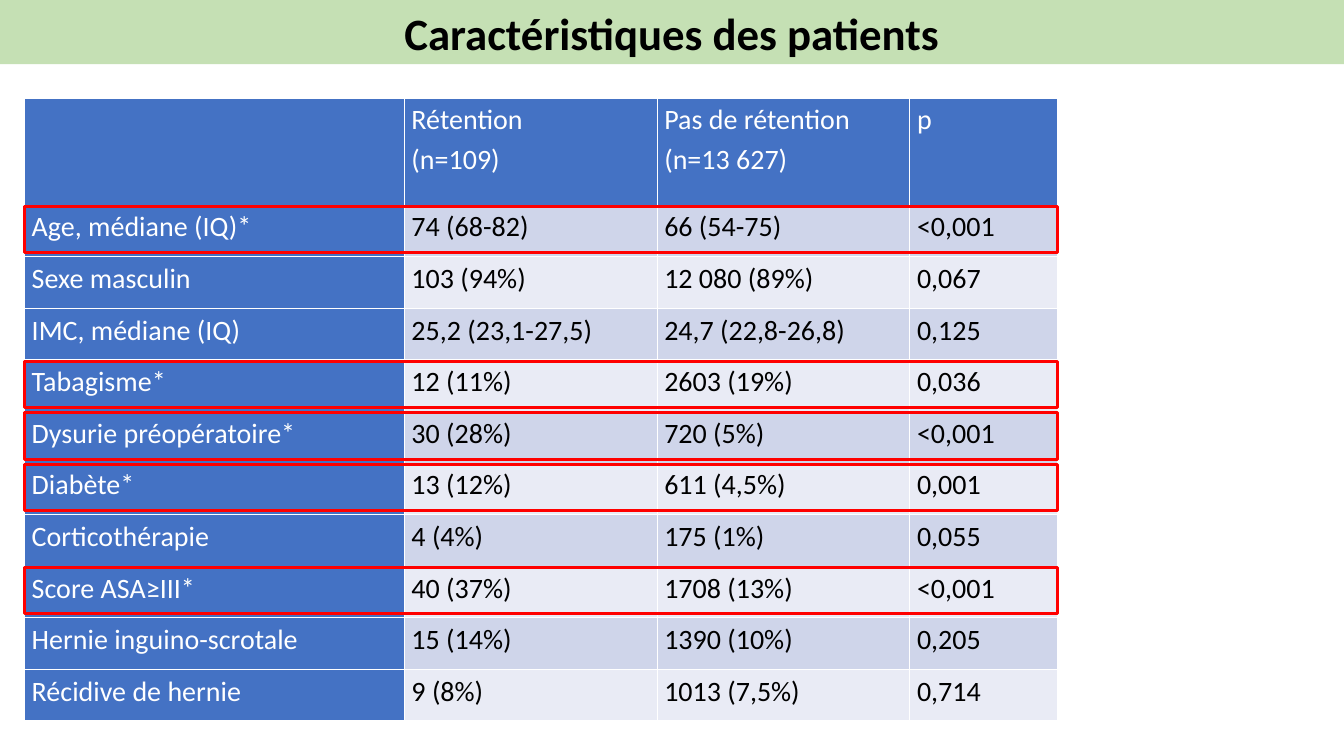
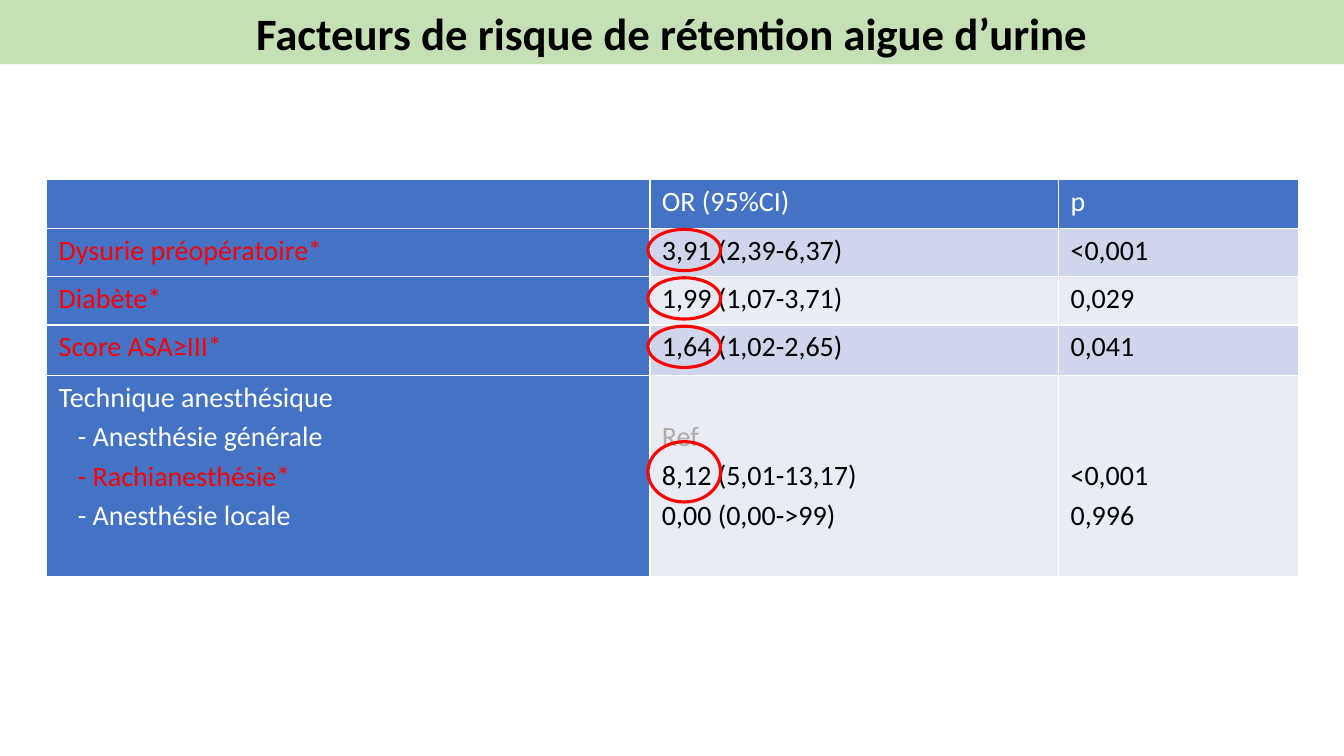
from pptx import Presentation
from pptx.dml.color import RGBColor
from pptx.enum.shapes import MSO_SHAPE as Preset
from pptx.enum.text import MSO_ANCHOR as Anchor, MSO_AUTO_SIZE as AutoSize, PP_ALIGN as Align
from pptx.util import Cm, Pt

SLIDE_WIDTH, SLIDE_HEIGHT = 33.87, 19.05
FONT = "Calibri"
BAND_GREEN, HEADER_BLUE = "C5E0B4", "4472C4"
ROW_FILLS = ("CFD5EA", "E9EBF5")
RED, GREY, WHITE, BLACK = "FF0000", "AFABAB", "FFFFFF", "000000"
LINE_PITCH = 0.99  # height of one table text line, in cm
REFERENCE = "Ref"

# In a cell, each leading line break lowers the text by one line.
PATIENTS = [
    ("", "Rétention\n(n=109)", "Pas de rétention\n(n=13 627)", "p"),
    ("Age, médiane (IQ)*", "74 (68-82)", "66 (54-75)", "<0,001"),
    ("Sexe masculin", "103 (94%)", "12 080 (89%)", "0,067"),
    ("IMC, médiane (IQ)", "25,2 (23,1-27,5)", "24,7 (22,8-26,8)", "0,125"),
    ("Tabagisme*", "12 (11%)", "2603 (19%)", "0,036"),
    ("Dysurie préopératoire*", "30 (28%)", "720 (5%)", "<0,001"),
    ("Diabète*", "13 (12%)", "611 (4,5%)", "0,001"),
    ("Corticothérapie", "4 (4%)", "175 (1%)", "0,055"),
    ("Score ASA≥III*", "40 (37%)", "1708 (13%)", "<0,001"),
    ("Hernie inguino-scrotale", "15 (14%)", "1390 (10%)", "0,205"),
    ("Récidive de hernie", "9 (8%)", "1013 (7,5%)", "0,714"),
]
RISK_FACTORS = [
    ("", "OR (95%CI)", "p"),
    ("Dysurie préopératoire*", "3,91 (2,39-6,37)", "<0,001"),
    ("Diabète*", "1,99 (1,07-3,71)", "0,029"),
    ("Score ASA≥III*", "1,64 (1,02-2,65)", "0,041"),
    ("Technique anesthésique\n- Anesthésie générale\n- Rachianesthésie*\n- Anesthésie locale",
     "\nRef\n8,12 (5,01-13,17)\n0,00 (0,00->99)",
     "\n\n<0,001\n0,996"),
]


def color(value):
    return RGBColor.from_string(value)


def format_runs(paragraph, size, text_color, bold=False):
    for run in paragraph.runs:
        run.font.name = FONT
        run.font.size = Pt(size)
        run.font.bold = bold
        run.font.color.rgb = color(text_color)


def add_titled_slide(presentation, title):
    slide = presentation.slides.add_slide(presentation.slide_layouts[6])
    band = slide.shapes.add_shape(Preset.RECTANGLE, 0, 0, Cm(SLIDE_WIDTH), Cm(1.62))
    band.shadow.inherit = False
    band.fill.solid()
    band.fill.fore_color.rgb = color(BAND_GREEN)
    band.line.fill.background()
    text_frame = band.text_frame
    text_frame.text = title
    text_frame.word_wrap = True
    text_frame.auto_size = AutoSize.SHAPE_TO_FIT_TEXT
    text_frame.vertical_anchor = Anchor.MIDDLE
    paragraph = text_frame.paragraphs[0]
    paragraph.alignment = Align.CENTER
    format_runs(paragraph, 32, BLACK, bold=True)
    return slide


def fill_cell(cell, text, fill, text_color, side_margin, star_color):
    lines = text.lstrip("\n")
    cell.margin_left = cell.margin_right = Cm(side_margin)
    cell.margin_top = Cm(LINE_PITCH * (len(text) - len(lines)))
    cell.margin_bottom = 0
    cell.fill.solid()
    cell.fill.fore_color.rgb = color(fill)
    cell.text_frame.text = lines
    for paragraph in cell.text_frame.paragraphs:
        paragraph.line_spacing = 1.15
        line_color = text_color
        if paragraph.text.endswith("*"):
            line_color = star_color
        elif paragraph.text == REFERENCE:
            line_color = GREY
        if paragraph.text.startswith("- "):
            paragraph._p.get_or_add_pPr().set("marL", str(Cm(0.48)))
        format_runs(paragraph, 20, line_color)


def add_data_table(slide, rows, left, top, widths, heights, side_margin, star_color=WHITE):
    """Add a table with a blue header row and column; labels ending in * take star_color."""
    table = slide.shapes.add_table(len(rows), len(widths), Cm(left), Cm(top),
                                   Cm(sum(widths)), Cm(sum(heights))).table
    for column, width in zip(table.columns, widths):
        column.width = Cm(width)
    for row_index, (texts, height) in enumerate(zip(rows, heights)):
        table.rows[row_index].height = Cm(height)
        for column_index, text in enumerate(texts):
            is_header = row_index == 0 or column_index == 0
            fill = HEADER_BLUE if is_header else ROW_FILLS[(row_index - 1) % 2]
            fill_cell(table.cell(row_index, column_index), text, fill,
                      WHITE if is_header else BLACK, side_margin, star_color)


def add_red_outline(slide, preset, left, top, width, height):
    outline = slide.shapes.add_shape(preset, Cm(left), Cm(top), Cm(width), Cm(height))
    outline.shadow.inherit = False
    outline.fill.background()
    outline.line.color.rgb = color(RED)
    outline.line.width = Pt(2.25)


def build_patients_slide(presentation):
    slide = add_titled_slide(presentation, "Caractéristiques des patients")
    left, top, header_height, row_height = 0.62, 2.47, 2.7, 1.3
    widths = (9.57, 6.37, 6.37, 3.73)
    heights = [header_height] + [row_height] * (len(PATIENTS) - 1)
    add_data_table(slide, PATIENTS, left, top, widths, heights, side_margin=0.18)
    for index, (label, *_) in enumerate(PATIENTS):
        if label.endswith("*"):
            add_red_outline(slide, Preset.RECTANGLE, left, top + sum(heights[:index]) + 0.03,
                            sum(widths), 1.17)


def build_risk_factors_slide(presentation):
    slide = add_titled_slide(presentation, "Facteurs de risque de rétention aigue d’urine")
    left, top = 1.18, 4.53
    widths = (15.2, 10.3, 6.04)
    heights = (1.22, 1.22, 1.22, 1.27, 5.08)
    add_data_table(slide, RISK_FACTORS, left, top, widths, heights, side_margin=0.3,
                   star_color=RED)
    circle_left, circle_width = 16.33, 1.83
    for index in range(1, 4):
        add_red_outline(slide, Preset.OVAL, circle_left, top + sum(heights[:index]) + 0.03,
                        circle_width, 1.04)
    add_red_outline(slide, Preset.OVAL, circle_left, 11.13, circle_width, 1.52)


def main():
    presentation = Presentation()
    presentation.slide_width = Cm(SLIDE_WIDTH)
    presentation.slide_height = Cm(SLIDE_HEIGHT)
    build_patients_slide(presentation)
    build_risk_factors_slide(presentation)
    presentation.save("out.pptx")


if __name__ == "__main__":
    main()
